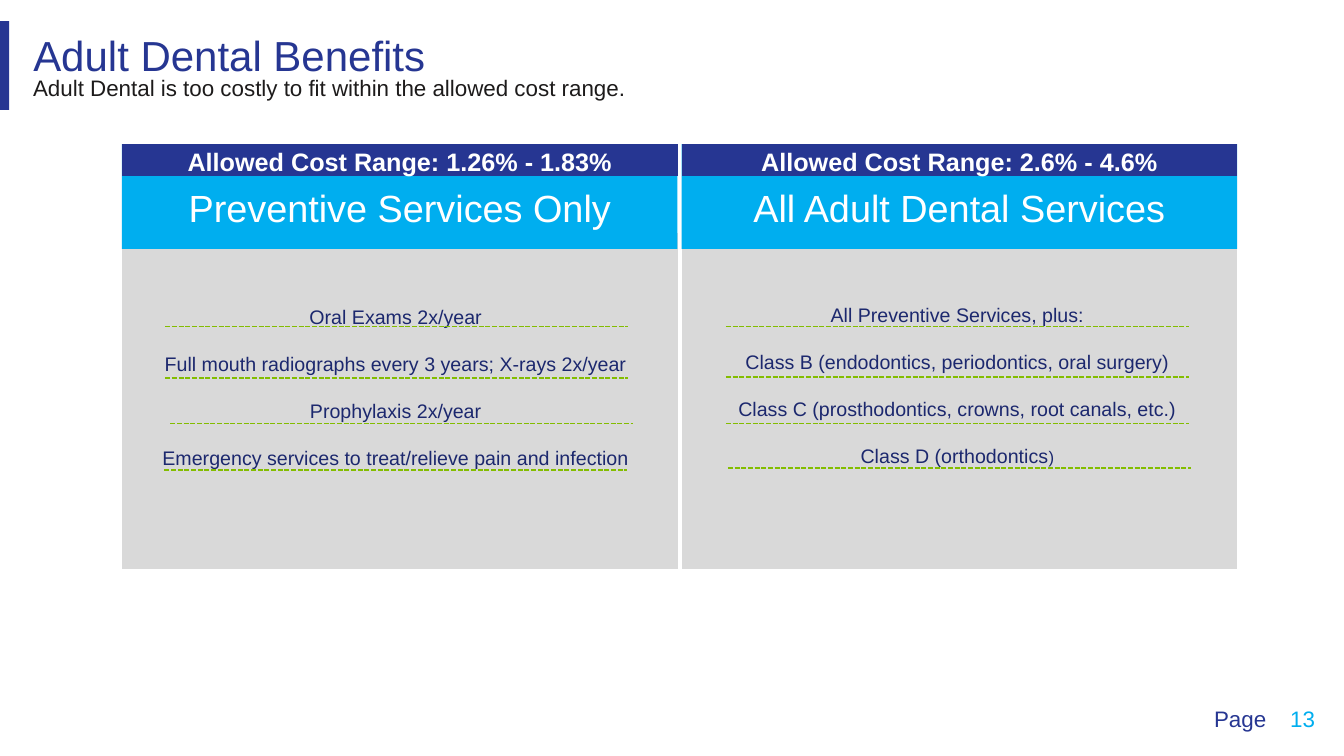
import lxml.etree
import pptx
import pptx.dml.color
import pptx.enum.dml
import pptx.enum.shapes
import pptx.enum.text
import pptx.oxml.ns
import pptx.util

RGBColor = pptx.dml.color.RGBColor
MSO_SHAPE = pptx.enum.shapes.MSO_SHAPE
PP_ALIGN = pptx.enum.text.PP_ALIGN
MSO_ANCHOR = pptx.enum.text.MSO_ANCHOR

NAVY = RGBColor(0x26, 0x36, 0x92)
DARK_NAVY = RGBColor(0x1C, 0x28, 0x6E)
CYAN = RGBColor(0x00, 0xAE, 0xEF)
GREY = RGBColor(0xD9, 0xD9, 0xD9)
GREEN = RGBColor(0x83, 0xBD, 0x00)
BLACK = RGBColor(0x1D, 0x1B, 0x1B)
WHITE = RGBColor(0xFF, 0xFF, 0xFF)

FONT = "Arial"
EMU_PER_PX = 9144  # 100 px to the inch
PANEL_WIDTH = 551
RULE_WIDTH = 459


def px(length):
    return pptx.util.Emu(length * EMU_PER_PX)


def style(paragraph, size, color, align=PP_ALIGN.LEFT, bold=False):
    paragraph.alignment = align
    paragraph.font.name = FONT
    paragraph.font.size = pptx.util.Pt(size)
    paragraph.font.bold = bold
    paragraph.font.color.rgb = color


def place(shape, left, top, width, height):
    shape.left, shape.top = px(left), px(top)
    shape.width, shape.height = px(width), px(height)


def add_text(slide, box, text, size, color, align=PP_ALIGN.CENTER,
             anchor=MSO_ANCHOR.MIDDLE, wrap=True, bold=False):
    frame = slide.shapes.add_textbox(*map(px, box)).text_frame
    frame.word_wrap = wrap
    frame.vertical_anchor = anchor
    frame.text = text
    style(frame.paragraphs[0], size, color, align, bold)


def add_block(slide, box, color, kind=MSO_SHAPE.RECTANGLE):
    block = slide.shapes.add_shape(kind, *map(px, box))
    block.shadow.inherit = False
    block.fill.solid()
    block.fill.fore_color.rgb = color
    block.line.fill.background()


def add_rule(slide, left, top):
    rule = slide.shapes.add_connector(
        pptx.enum.shapes.MSO_CONNECTOR.STRAIGHT,
        px(left), px(top), px(left + RULE_WIDTH), px(top))
    rule.line.color.rgb = GREEN
    rule.line.width = pptx.util.Pt(1.2)
    rule.line.dash_style = pptx.enum.dml.MSO_LINE.SQUARE_DOT
    lxml.etree.SubElement(rule.element.spPr, pptx.oxml.ns.qn("a:effectLst"))


def add_header(slide, left, top):
    add_block(slide, (left, top, 9, 88), NAVY)
    title = slide.shapes.title
    place(title, left + 23, top + 3, 636, 61)
    title.text = "Adult Dental Benefits"
    title.text_frame.auto_size = pptx.enum.text.MSO_AUTO_SIZE.NONE
    title.text_frame.vertical_anchor = MSO_ANCHOR.MIDDLE
    style(title.text_frame.paragraphs[0], 30, NAVY)
    add_text(slide, (left + 23, top + 47, 621, 37),
             "Adult Dental is too costly to fit within the allowed cost range.",
             16, BLACK, PP_ALIGN.LEFT, wrap=False)


def fill_services(slide, placeholder, box, services):
    slide.shapes.element.append(placeholder.element)  # in front of the panel
    place(placeholder, *box)
    frame = placeholder.text_frame
    frame.auto_size = pptx.enum.text.MSO_AUTO_SIZE.NONE
    frame.margin_left = frame.margin_right = 0
    frame.margin_top = frame.margin_bottom = 0
    frame.text = "\n".join(services)
    for paragraph in frame.paragraphs:
        properties = paragraph._p.get_or_add_pPr()
        properties.set("marL", "0")
        properties.set("indent", "0")
        paragraph.line_spacing = 2.0
        paragraph.space_before = pptx.util.Pt(0)
        lxml.etree.SubElement(properties, pptx.oxml.ns.qn("a:buNone"))
        style(paragraph, 14, DARK_NAVY, PP_ALIGN.CENTER)
    return frame


def add_panel(slide, left, top, cost_range, heading, placeholder, list_box,
              services, rules):
    """Place one benefit panel; list_box and rules are offsets from its corner."""
    process = MSO_SHAPE.FLOWCHART_PROCESS
    add_block(slide, (left, top + 88, PANEL_WIDTH, 334), GREY, process)
    add_block(slide, (left, top, PANEL_WIDTH, 104), CYAN)
    add_text(slide, (left, top + 35, PANEL_WIDTH, 56), heading, 27, WHITE,
             anchor=MSO_ANCHOR.TOP)
    add_block(slide, (left, top, PANEL_WIDTH, 32), NAVY, process)
    add_text(slide, (left, top - 3, PANEL_WIDTH, 40),
             f"Allowed Cost Range: {cost_range}", 18, WHITE,
             anchor=MSO_ANCHOR.TOP, bold=True)
    x, y, width = list_box
    frame = fill_services(slide, placeholder, (left + x, top + y, width, 181),
                          services)
    for rule_x, rule_y in rules:
        add_rule(slide, left + rule_x, top + rule_y)
    return frame


def add_page_number(slide, left, top):
    add_text(slide, (left + 45, top - 7, 106, 51), "13", 16, CYAN)
    add_text(slide, (left, top, 72, 37), "Page", 16, NAVY, wrap=False)


def main():
    presentation = pptx.Presentation()
    presentation.slide_width = px(1333)
    presentation.slide_height = px(750)
    slide = presentation.slides.add_slide(
        presentation.slide_layouts.get_by_name("Two Content"))
    left_list, right_list = list(slide.placeholders)[1:]

    add_page_number(slide, 1194, 694)
    add_header(slide, 0, 21)
    add_panel(
        slide, 121, 143, "1.26% - 1.83%", "Preventive Services Only",
        left_list, (36, 136, 471),
        ["Oral Exams 2x/year",
         "Full mouth radiographs every 3 years; X-rays 2x/year",
         "Prophylaxis 2x/year",
         "Emergency services to treat/relieve pain and infection"],
        [(43, 181), (43, 232), (48, 277), (42, 323)])
    all_services = add_panel(
        slide, 676, 143, "2.6% - 4.6%", "All Adult Dental Services",
        right_list, (44, 134, 459),
        ["All Preventive Services, plus:",
         "Class B (endodontics, periodontics, oral surgery)",
         "Class C (prosthodontics, crowns, root canals, etc.)",
         "Class D (orthodontics"],
        [(44, 181), (44, 231), (44, 277), (46, 321)])
    # Smaller closing bracket
    bracket = all_services.paragraphs[-1].add_run()
    bracket.text = ")"
    bracket.font.size = pptx.util.Pt(12)

    presentation.save("out.pptx")


if __name__ == "__main__":
    main()
